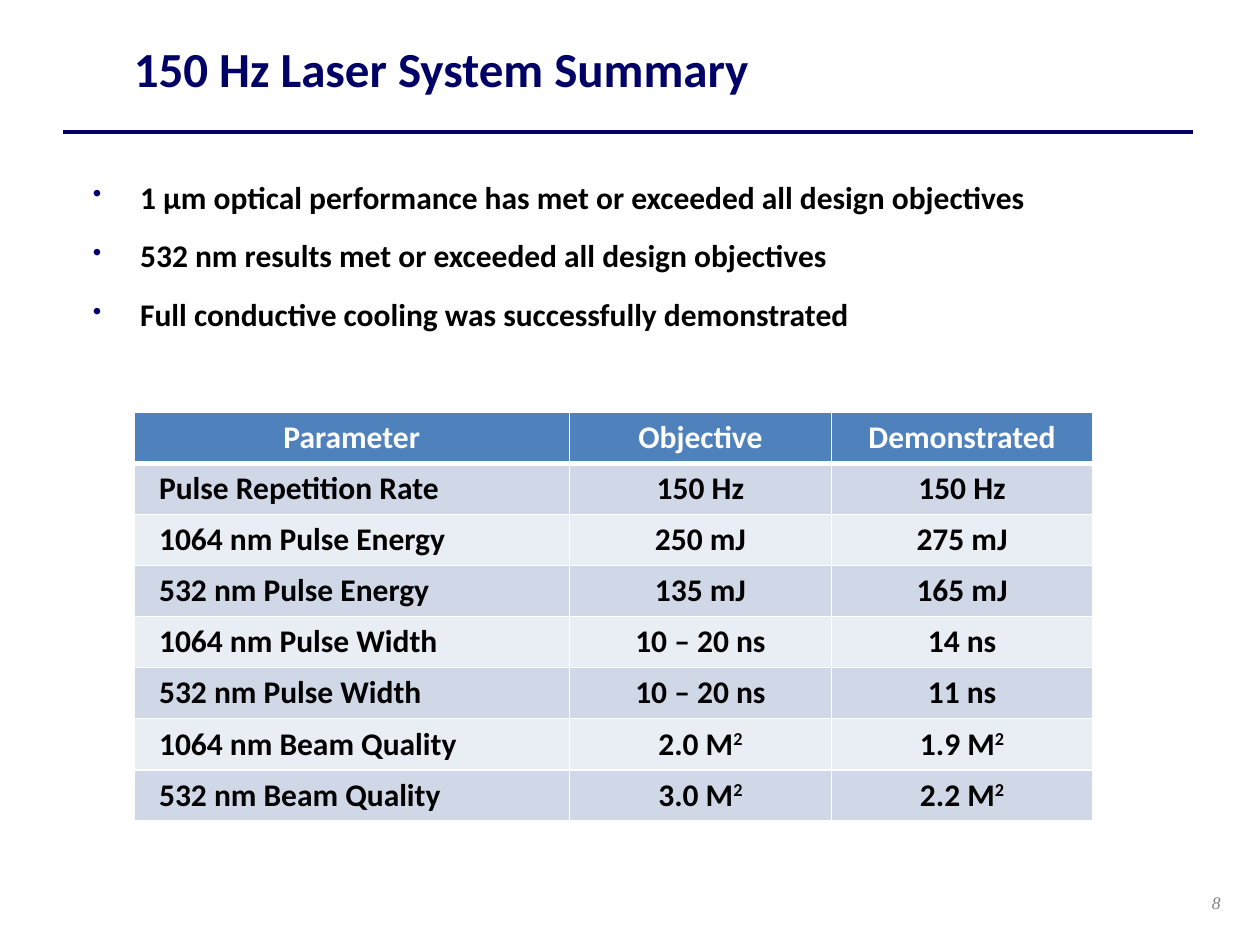
from dataclasses import dataclass

import pptx
import pptx.dml.color
import pptx.enum.shapes
import pptx.enum.text
import pptx.oxml.ns
import pptx.util
from lxml import etree

Pt = pptx.util.Pt
Align = pptx.enum.text.PP_ALIGN
Anchor = pptx.enum.text.MSO_ANCHOR


@dataclass(frozen=True)
class Theme:
    navy: str = "000066"
    black: str = "000000"
    white: str = "FFFFFF"
    grey: str = "808080"
    header: str = "4F81BD"
    bands: tuple = ("D0D8E8", "E9EDF4")
    body_font: str = "Calibri"
    number_font: str = "Times New Roman"
    title_size: float = 28
    body_size: float = 18
    number_size: float = 10


def rgb(value):
    return pptx.dml.color.RGBColor.from_string(value)


def add_child(parent, tag, **attributes):
    return etree.SubElement(parent, pptx.oxml.ns.qn(tag), attributes)


class SlideBuilder:
    def __init__(self, page, theme):
        self.page = page
        self.theme = theme

    def style(self, para, size, color, name=None, bold=True, italic=False):
        font = para.font
        font.name = name or self.theme.body_font
        font.size = Pt(size)
        font.bold = bold
        font.italic = italic
        font.color.rgb = rgb(color)

    def frame(self, left, top, width, height, anchor=Anchor.TOP):
        box = self.page.shapes.add_textbox(Pt(left), Pt(top), Pt(width), Pt(height))
        box.text_frame.word_wrap = True
        box.text_frame.vertical_anchor = anchor
        return box.text_frame

    def label(self, text, bounds, size, color, anchor=Anchor.TOP, **font):
        para = self.frame(*bounds, anchor=anchor).paragraphs[0]
        para.text = text
        para.alignment = Align.CENTER
        self.style(para, size, color, **font)

    def rule(self, left, right, y):
        line = self.page.shapes.add_connector(
            pptx.enum.shapes.MSO_CONNECTOR.STRAIGHT, Pt(left), Pt(y), Pt(right), Pt(y))
        line.line.color.rgb = rgb(self.theme.navy)
        line.line.width = Pt(2.5)
        add_child(line._element.spPr, "a:effectLst")

    def bullets(self, items, bounds, indent=27):
        frame = self.frame(*bounds)
        for index, item in enumerate(items):
            para = frame.add_paragraph() if index else frame.paragraphs[0]
            para.text = item
            para.space_after = Pt(12)
            props = para._p.get_or_add_pPr()
            props.set("marL", str(Pt(indent)))
            props.set("indent", str(-Pt(indent)))
            add_child(add_child(props, "a:buClr"), "a:srgbClr", val=self.theme.navy)
            add_child(props, "a:buSzPct", val="80000")
            add_child(props, "a:buChar", char="•")
            self.style(para, self.theme.body_size, self.theme.black)

    def borders(self, cell, bottom):
        props = cell._tc.get_or_add_tcPr()
        for side, width in (("L", 1), ("R", 1), ("T", 1), ("B", bottom)):
            line = add_child(props, f"a:ln{side}", w=str(Pt(width)))
            add_child(add_child(line, "a:solidFill"), "a:srgbClr", val=self.theme.white)

    def cell(self, cell, text, is_header, is_name, fill):
        """Fill one cell; a caret in the text starts a superscript."""
        self.borders(cell, bottom=3 if is_header else 1)
        cell.fill.solid()
        cell.fill.fore_color.rgb = rgb(fill)
        para = cell.text_frame.paragraphs[0]
        base, _, power = text.partition("^")
        para.add_run().text = base
        if power:
            span = para.add_run()
            span.text = power
            span._r.get_or_add_rPr().set("baseline", "30000")
        if is_name and not is_header:
            para._p.get_or_add_pPr().set("marL", str(Pt(7.2)))
        else:
            para.alignment = Align.CENTER
        color = self.theme.white if is_header else self.theme.black
        self.style(para, self.theme.body_size, color)

    def table(self, rows, left, top, widths, row_height):
        table = self.page.shapes.add_table(
            len(rows), len(widths), Pt(left), Pt(top),
            Pt(sum(widths)), Pt(row_height * len(rows))).table
        for column, width in zip(table.columns, widths):
            column.width = Pt(width)
        for r, values in enumerate(rows):
            table.rows[r].height = Pt(row_height)
            fill = self.theme.bands[(r - 1) % 2] if r else self.theme.header
            for c, text in enumerate(values):
                self.cell(table.cell(r, c), text, r == 0, c == 0, fill)


BULLETS = (
    "1 µm optical performance has met or exceeded all design objectives",
    "532 nm results met or exceeded all design objectives",
    "Full conductive cooling was successfully demonstrated",
)
RESULTS = (
    ("Parameter", "Objective", "Demonstrated"),
    ("Pulse Repetition Rate", "150 Hz", "150 Hz"),
    ("1064 nm Pulse Energy", "250 mJ", "275 mJ"),
    ("532 nm Pulse Energy", "135 mJ", "165 mJ"),
    ("1064 nm Pulse Width", "10 – 20 ns", "14 ns"),
    ("532 nm Pulse Width", "10 – 20 ns", "11 ns"),
    ("1064 nm Beam Quality", "2.0 M^2", "1.9 M^2"),
    ("532 nm Beam Quality", "3.0 M^2", "2.2 M^2"),
)


def main():
    theme = Theme()
    deck = pptx.Presentation()
    deck.slide_width, deck.slide_height = Pt(720), Pt(540)
    builder = SlideBuilder(deck.slides.add_slide(deck.slide_layouts[6]), theme)

    builder.rule(36, 682, 75.5)
    builder.label("8", (677, 506, 36, 23), theme.number_size, theme.grey,
                  name=theme.number_font, bold=False, italic=True)
    builder.bullets(BULLETS, (46, 98, 624, 114.5))
    builder.label("150 Hz Laser System Summary", (36, 17.5, 432, 43),
                  theme.title_size, theme.navy, anchor=Anchor.MIDDLE)
    builder.table(RESULTS, 76.5, 235.5, (249, 149.5, 149.5), 29.2)
    deck.save("out.pptx")


if __name__ == "__main__":
    main()
